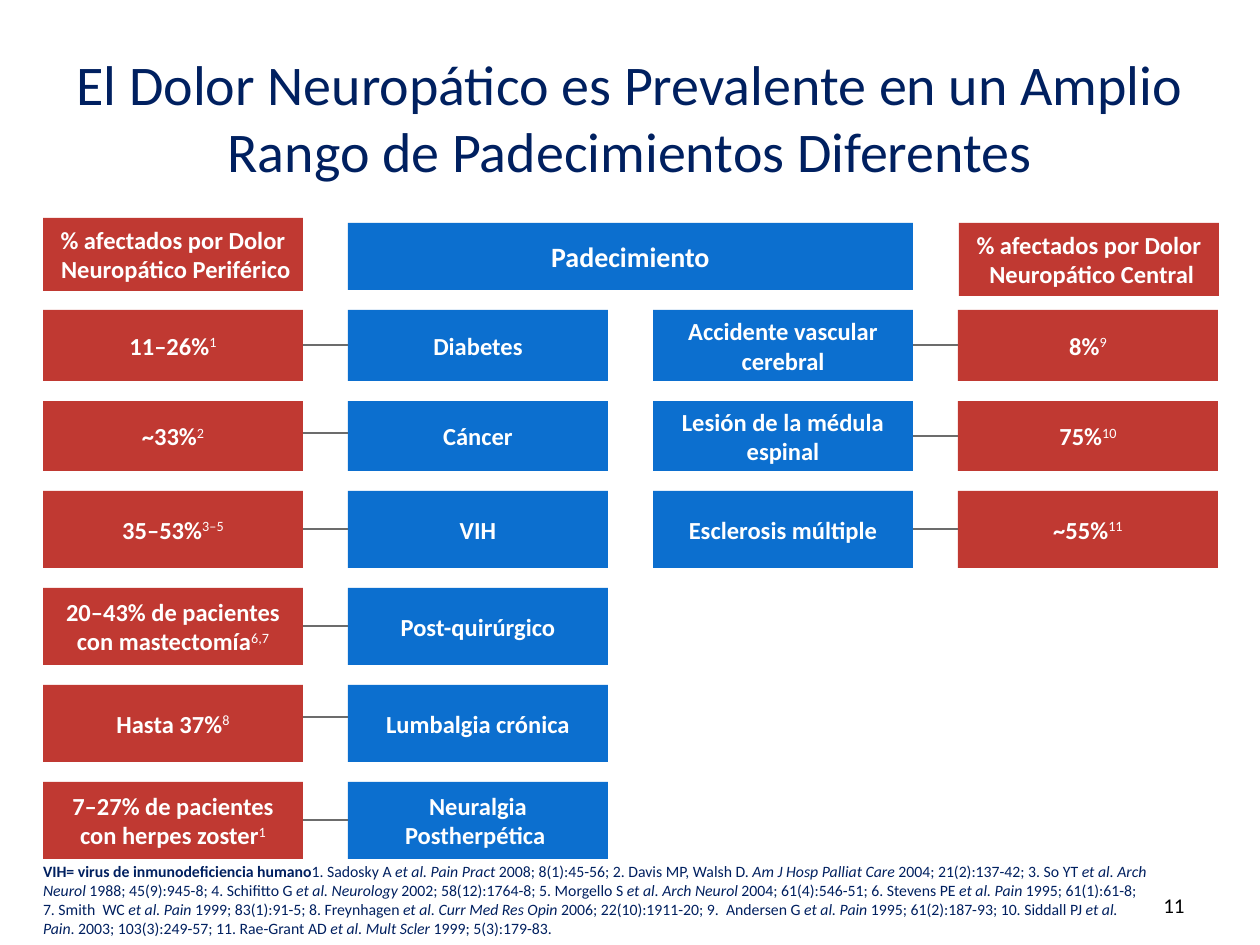
from pptx import Presentation
from pptx import util as u
from pptx.dml.color import RGBColor
from pptx.enum import shapes, text
from pptx.oxml.ns import qn
from lxml import etree

COLORS = {"navy": "002060", "red": "C03932", "blue": "0C6FCF",
          "white": "FFFFFF", "gray": "6C6C6C", "black": "000000"}
FONT = "Calibri"
TITLE = "El Dolor Neuropático es Prevalente en un Amplio Rango de Padecimientos Diferentes"

# fill, left, top, width, height, size, lines
HEADS = [
    ("red", 43, 218, 260, 73, 14, ["% afectados por Dolor", " Neuropático Periférico"]),
    ("blue", 348, 223, 565, 67, 16, ["Padecimiento"]),
    ("red", 959, 223, 260, 73, 14, ["% afectados por Dolor", " Neuropático Central"]),
]
# share, reference, condition, height of the link
PERIPHERAL = [
    ("11–26%", "1", "Diabetes", 345),
    ("~33%", "2", "Cáncer", 433),
    ("35–53%", "3–5", "VIH", 529),
    ("20–43% de pacientes con mastectomía", "6,7", "Post-quirúrgico", 626),
    ("Hasta 37%", "8", "Lumbalgia crónica", 717),
    ("7–27% de pacientes con herpes zoster", "1", "Neuralgia Postherpética ", 820),
]
CENTRAL = [
    ("8%", "9", "Accidente vascular cerebral", 345),
    ("75%", "10", "Lesión de la médula espinal", 436),
    ("~55%", "11", "Esclerosis múltiple", 529),
]
ABBR = "VIH= virus de inmunodeficiencia humano"
# every second piece between asterisks is italic
REFS = (
    "1. Sadosky A *et al. Pain Pract* 2008; 8(1):45-56; "
    "2. Davis MP, Walsh D. *Am J Hosp Palliat Care* 2004; 21(2):137-42; "
    "3. So YT *et al. Arch Neurol* 1988; 45(9):945-8; "
    "4. Schifitto G *et al. Neurology* 2002; 58(12):1764-8; "
    "5. Morgello S *et al. Arch Neurol* 2004; 61(4):546-51; "
    "6. Stevens PE *et al. Pain* 1995; 61(1):61-8; "
    "7. Smith  WC *et al. Pain* 1999; 83(1):91-5; "
    "8. Freynhagen *et al. Curr Med Res Opin* 2006; 22(10):1911-20; "
    "9.  Andersen G *et al. Pain* 1995; 61(2):187-93; "
    "10. Siddall PJ *et al. Pain*. 2003; 103(3):249-57; "
    "11. Rae-Grant AD *et al. Mult Scler* 1999; 5(3):179-83."
)

LEFT, PITCH, WIDTH = 43, 305, 260
TOP, GAP = 310, 20
HEIGHTS = [71, 70, 77, 77, 77, 77]
TOPS = [TOP + sum(HEIGHTS[:i]) + GAP * i for i in range(len(HEIGHTS))]
SCALE = 914400 / 126


def px(*vals):
    return [u.Emu(round(v * SCALE)) for v in vals]


def color(name):
    return RGBColor.from_string(COLORS[name])


def add_run(para, words, size, tint, bold=False, italic=False, sup=False):
    run = para.add_run()
    run.text = words
    font = run.font
    font.name, font.size = FONT, u.Pt(size)
    font.bold, font.italic = bold, italic
    font.color.rgb = color(tint)
    if sup:
        font._element.set("baseline", "30000")


def add_box(slide, fill, place, lines, size=14, ref="", wrap=True):
    box = slide.shapes.add_shape(shapes.MSO_SHAPE.RECTANGLE, *px(*place))
    box.shadow.inherit = False
    box.fill.solid()
    box.fill.fore_color.rgb = color(fill)
    box.line.fill.background()
    frame = box.text_frame
    frame.word_wrap = wrap
    frame.vertical_anchor = text.MSO_ANCHOR.MIDDLE
    for i, line in enumerate(lines):
        para = frame.add_paragraph() if i else frame.paragraphs[0]
        para.alignment = text.PP_ALIGN.CENTER
        add_run(para, line, size, "white", bold=True)
    if ref:
        add_run(para, ref, size, "white", sup=True)


def add_link(slide, x, y):
    link = slide.shapes.add_connector(
        shapes.MSO_CONNECTOR.STRAIGHT, *px(x, y, x + PITCH - WIDTH, y))
    link.line.color.rgb = color("gray")
    link.line.width = u.Pt(0.75)
    etree.SubElement(link._element.spPr, qn("a:effectLst"))


def add_group(slide, rows, share_col, name_col):
    share_x, name_x = LEFT + PITCH * share_col, LEFT + PITCH * name_col
    for (share, ref, name, y), top, high in zip(rows, TOPS, HEIGHTS):
        add_box(slide, "red", (share_x, top, WIDTH, high), [share], ref=ref)
        add_box(slide, "blue", (name_x, top, WIDTH, high), [name])
        add_link(slide, min(share_x, name_x) + WIDTH, y)


def add_text(slide, place, anchor):
    frame = slide.shapes.add_textbox(*px(*place)).text_frame
    frame.word_wrap = True
    frame.vertical_anchor = anchor
    return frame


def add_title(slide):
    title = slide.shapes.title
    title.left, title.top, title.width, title.height = px(63, 38, 1134, 157)
    frame = title.text_frame
    frame.auto_size = text.MSO_AUTO_SIZE.NONE
    frame.vertical_anchor = text.MSO_ANCHOR.MIDDLE
    para = frame.paragraphs[0]
    para.alignment = text.PP_ALIGN.CENTER
    add_run(para, TITLE, 32, "navy")


def add_foot(slide):
    frame = add_text(slide, (43, 861, 1104, 77), text.MSO_ANCHOR.BOTTOM)
    frame.margin_left = frame.margin_right = frame.margin_top = frame.margin_bottom = 0
    para = frame.paragraphs[0]
    add_run(para, ABBR, 9, "navy", bold=True)
    for i, part in enumerate(REFS.split("*")):
        add_run(para, part, 9, "navy", italic=i % 2 == 1)

    para = add_text(slide, (903, 880, 294, 50), text.MSO_ANCHOR.MIDDLE).paragraphs[0]
    para.alignment = text.PP_ALIGN.RIGHT
    add_run(para, "11", 12, "black")


def main():
    deck = Presentation()
    deck.slide_width, deck.slide_height = px(1260, 945)
    slide = deck.slides.add_slide(deck.slide_layouts[5])
    add_title(slide)
    for fill, x, y, wide, high, size, lines in HEADS:
        add_box(slide, fill, (x, y, wide, high), lines, size, wrap=False)
    add_group(slide, PERIPHERAL, 0, 1)
    add_group(slide, CENTRAL, 3, 2)
    add_foot(slide)
    deck.save("out.pptx")


if __name__ == "__main__":
    main()
